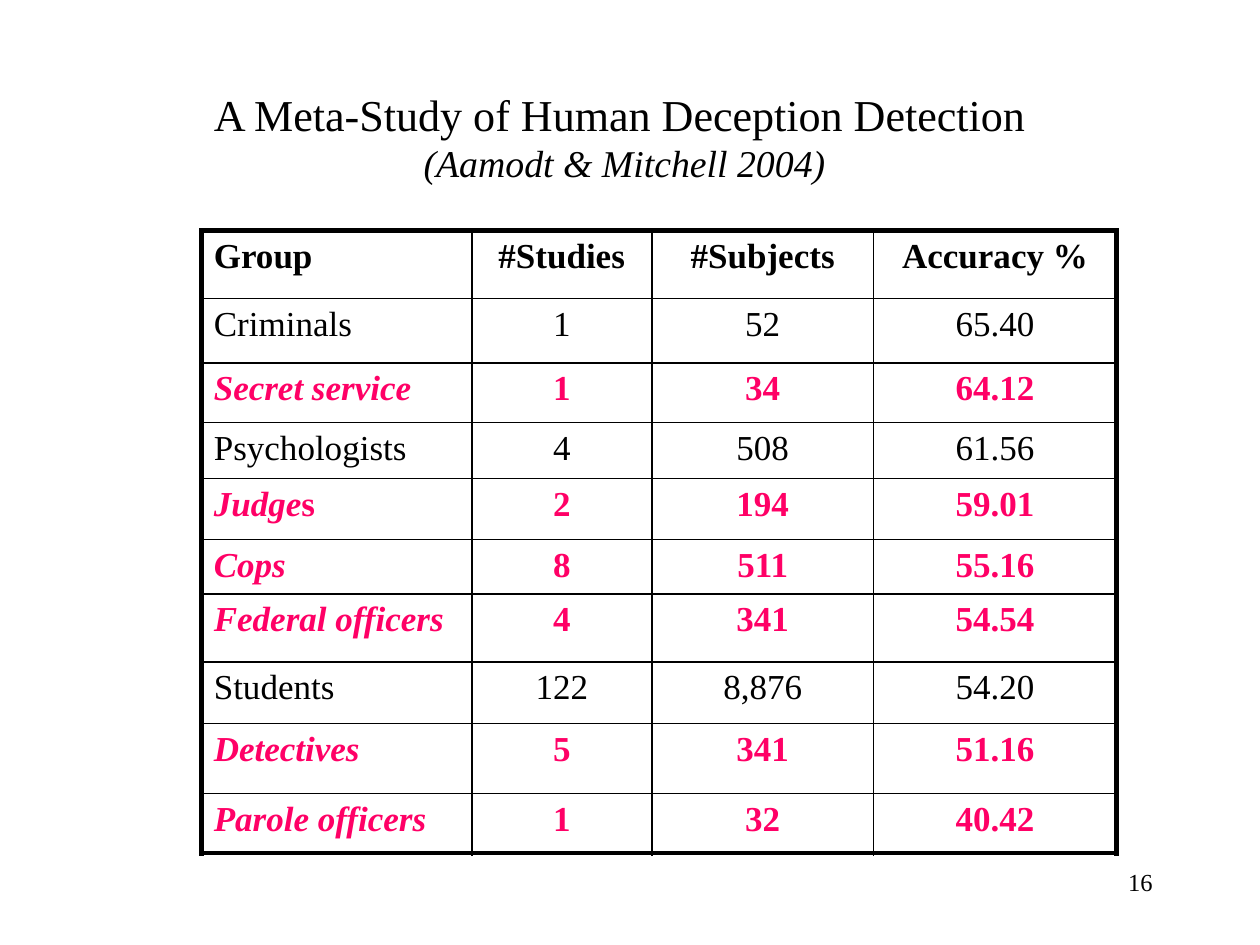
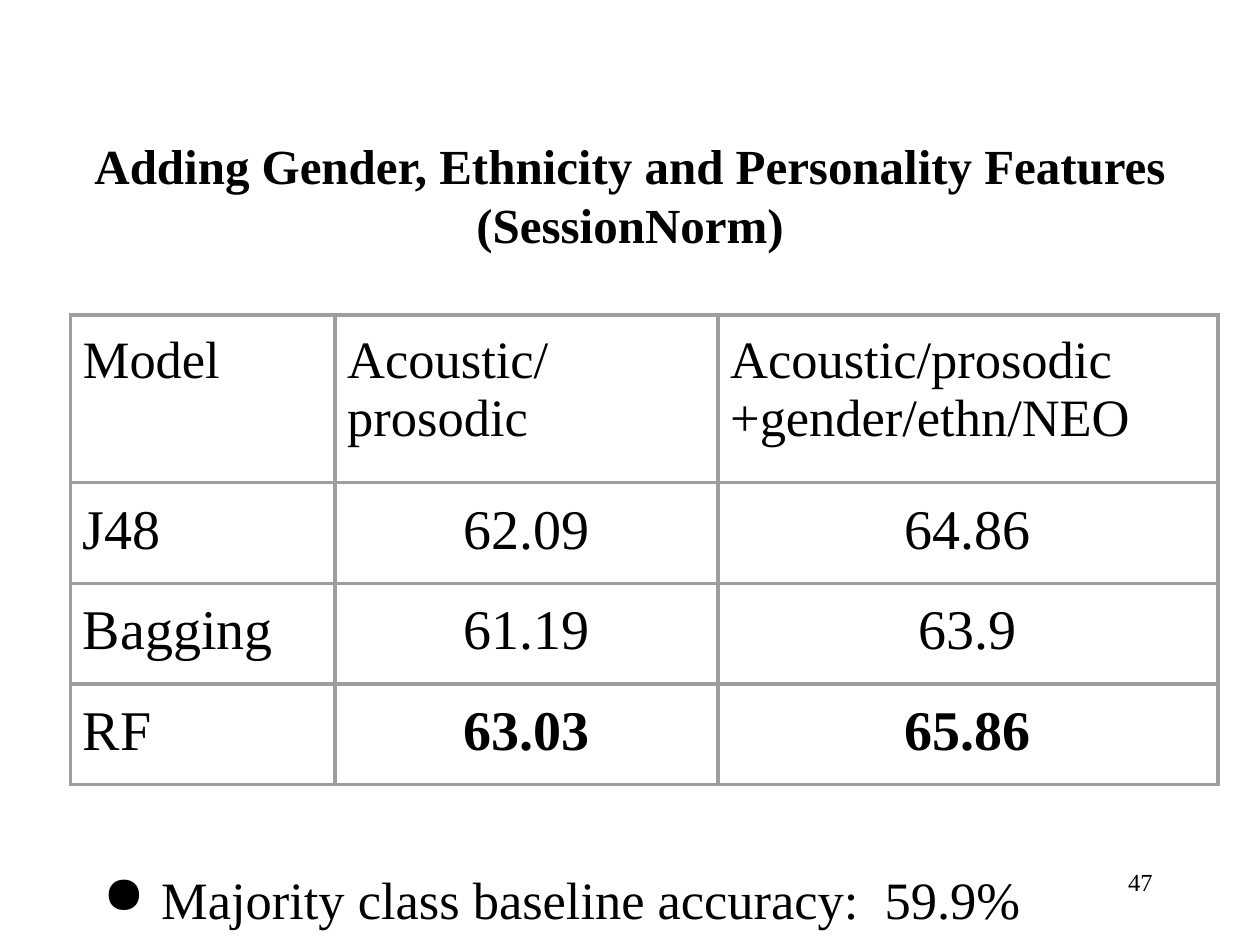
from lxml import etree
from pptx import Presentation
from pptx.dml.color import RGBColor
from pptx.enum.text import MSO_ANCHOR, MSO_AUTO_SIZE, PP_ALIGN
from pptx.oxml.ns import qn
from pptx.util import Cm, Pt

LEFT, MID, RIGHT = PP_ALIGN.LEFT, PP_ALIGN.CENTER, PP_ALIGN.RIGHT
TOP, CENTRE, BOTTOM = MSO_ANCHOR.TOP, MSO_ANCHOR.MIDDLE, MSO_ANCHOR.BOTTOM
FIXED = MSO_AUTO_SIZE.NONE
FONT = "Times New Roman"
BLACK, WHITE, PINK, GREY = "000000", "FFFFFF", "FF0066", "9E9E9E"
PAGE = (18.21, 17.35, 5.28, 1.27)

GROUPS = [
    # marked, group, studies, subjects, accuracy; "|" ends the italics
    (False, "Criminals", "1", "52", "65.40"),
    (True, "Secret service", "1", "34", "64.12"),
    (False, "Psychologists", "4", "508", "61.56"),
    (True, "Judge|s", "2", "194", "59.01"),
    (True, "Cops", "8", "511", "55.16"),
    (True, "Federal officers", "4", "341", "54.54"),
    (False, "Students", "122", "8,876", "54.20"),
    (True, "Detectives", "5", "341", "51.16"),
    (True, "Parole officers", "1", "32", "40.42"),
]
MODELS = [
    ("J48", "62.09", "64.86"),
    ("Bagging", "61.19", "63.9"),
    ("RF", "63.03", "65.86"),
]


def paint(hue):
    return RGBColor.from_string(hue)


def write(par, text, size, hue=BLACK, **look):
    run = par.add_run()
    run.text = text
    font = run.font
    for key, val in {"name": FONT, "size": Pt(size), "bold": False,
                     "italic": False, **look}.items():
        setattr(font, key, val)
    font.color.rgb = paint(hue)


def place(shape, box):
    for key, val in zip(("left", "top", "width", "height"), box):
        setattr(shape, key, Cm(val))


def frame(shape, anchor=TOP, align=LEFT, pad=0.13):
    """Set up the text frame of a shape and return its first paragraph."""
    body = shape.text_frame
    for key, val in {"word_wrap": True, "auto_size": FIXED,
                     "vertical_anchor": anchor, "margin_left": Cm(0.25),
                     "margin_right": Cm(0.25), "margin_top": Cm(pad),
                     "margin_bottom": Cm(pad)}.items():
        setattr(body, key, val)
    par = body.paragraphs[0]
    par.alignment = align
    return par


def label(slide, box, align=LEFT, pad=0.13):
    return frame(slide.shapes.add_textbox(*map(Cm, box)), TOP, align, pad)


def head(slide, box, anchor, pad=0.13):
    title = slide.shapes.title
    place(title, box)
    return frame(title, anchor, MID, pad)


def start(deck, page):
    """Add a title-only slide with its page number."""
    slide = deck.slides.add_slide(deck.slide_layouts[5])
    fill = slide.background.fill
    fill.solid()
    fill.fore_color.rgb = paint(WHITE)
    write(label(slide, PAGE, RIGHT), page, 14)
    return slide


def edge(cell, side, hue, width):
    props = cell._tc.get_or_add_tcPr()
    line = etree.SubElement(props, qn("a:ln" + side), w=str(Pt(width)))
    fill = etree.SubElement(line, qn("a:solidFill"))
    etree.SubElement(fill, qn("a:srgbClr"), val=hue)


def grid(slide, spot, cols, rows, hue, inner, outer, pad):
    """Add a plain table whose rim may be heavier than its inner lines."""
    box = (*spot, sum(cols), sum(rows))
    table = slide.shapes.add_table(len(rows), len(cols), *map(Cm, box)).table
    table.first_row = table.horz_banding = False
    for col, width in zip(table.columns, cols):
        col.width = Cm(width)
    for row, height in zip(table.rows, rows):
        row.height = Cm(height)
    for r in range(len(rows)):
        for c in range(len(cols)):
            cell = table.cell(r, c)
            rim = {"L": c == 0, "R": c == len(cols) - 1,
                   "T": r == 0, "B": r == len(rows) - 1}
            for side, out in rim.items():
                edge(cell, side, hue, outer if out else inner)
            cell.fill.background()
            cell.margin_left = cell.margin_right = Cm(0.25)
            cell.margin_top = cell.margin_bottom = Cm(pad)
    return table


def entry(table, r, c, align):
    par = table.cell(r, c).text_frame.paragraphs[0]
    par.alignment = align
    return par


def study(deck):
    slide = start(deck, "16")
    par = head(slide, (1.7, 1.63, 21.59, 2.24), CENTRE)
    write(par, "A Meta-Study of Human Deception Detection", 25.2)
    par.add_line_break()
    write(par, " ", 21.6)
    write(par, "(Aamodt & Mitchell 2004)", 21.6, italic=True)

    cols = (5.45, 3.63, 4.47, 4.9)
    rows = (1.37, 1.3, 1.2, 1.13, 1.23, 1.1, 1.37, 1.24, 1.41, 1.2)
    table = grid(slide, (4.06, 4.65), cols, rows, BLACK, 1, 3, 0.13)
    for c, text in enumerate(("Group", "#Studies", "#Subjects", "Accuracy %")):
        write(entry(table, 0, c, MID if c else LEFT), text, 20, bold=True)
    for r, (hot, *texts) in enumerate(GROUPS, 1):
        hue = PINK if hot else BLACK
        for c, text in enumerate(texts):
            par = entry(table, r, c, MID if c else LEFT)
            for n, part in enumerate(text.split("|")):
                slant = hot and c == n == 0
                write(par, part, 20, hue, bold=hot, italic=slant)


def bullet(slide, box, text):
    par = label(slide, box, pad=0.25)
    props = par._p.get_or_add_pPr()
    props.set("marL", str(Cm(1.27)))
    props.set("indent", str(Cm(-1.17)))
    etree.SubElement(props, qn("a:buChar"), char="●")
    write(par, text, 30)


def scores(deck):
    slide = start(deck, "47")
    par = head(slide, (1.27, 2.39, 22.86, 2.97), BOTTOM, 0.25)
    write(par, "Adding Gender, Ethnicity and Personality Features "
          "(SessionNorm)", 28, bold=True)

    table = grid(slide, (1.42, 6.35), (5.33, 7.72, 10.08),
                 (3.38, 2.03, 2.03, 2.03), GREY, 2.25, 2.25, 0.33)
    for c, text in enumerate(("Model", "Acoustic/prosodic",
                              "Acoustic/prosodic")):
        write(entry(table, 0, c, LEFT), text, 30)
    write(table.cell(0, 2).text_frame.add_paragraph(), "+gender/ethn/NEO", 30)
    for r, texts in enumerate(MODELS, 1):
        for c, text in enumerate(texts):
            best = r == len(MODELS) and c > 0
            write(entry(table, r, c, MID if c else LEFT), text, 32, bold=best)

    bullet(slide, (1.73, 17.22, 23.11, 2.29),
           "Majority class baseline accuracy:  59.9%")


def main():
    deck = Presentation()
    deck.slide_width, deck.slide_height = Cm(25.4), Cm(19.05)
    study(deck)
    scores(deck)
    deck.save("out.pptx")


if __name__ == "__main__":
    main()
